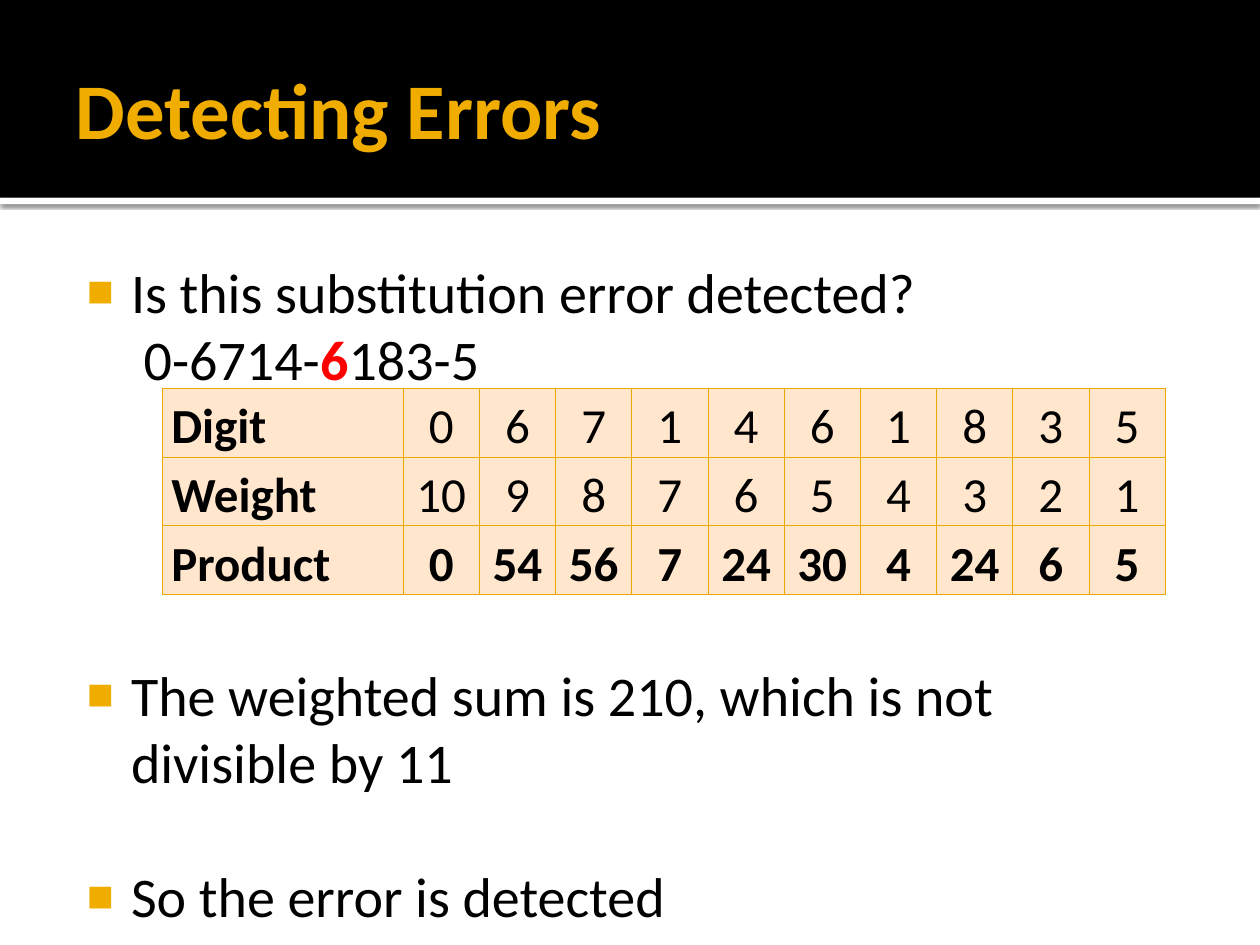
"""Build the slide on detecting a substitution error with a weighted sum."""
from lxml import etree
from pptx import Presentation
from pptx import util as u
from pptx.dml import color
from pptx.enum import shapes, text
from pptx.oxml import ns

FONT, GOLD, BLACK, RED = "Calibri", "F0AD00", "000000", "FF0000"
CELL, BORDER = "FFE6CC", "EBA900"
LINE = 38.4


def rgb(value):
    return color.RGBColor.from_string(value)


def add_xml(parent, tag, **attrs):
    return etree.SubElement(parent, ns.qn(tag), **attrs)


class Deck:
    def __init__(self, prs):
        self.s = prs.slides.add_slide(prs.slide_layouts[1])

    def style(self, r, size, bold=False, c=BLACK):
        r.font.name, r.font.size, r.font.bold = FONT, u.Pt(size), bold
        r.font.color.rgb = rgb(c)

    def frame(self, sp, box, margins):
        sp.left, sp.top, sp.width, sp.height = map(u.Inches, box)
        tf = sp.text_frame
        tf.auto_size = text.MSO_AUTO_SIZE.NONE
        tf.margin_left, tf.margin_top, tf.margin_right, tf.margin_bottom = map(u.Inches, margins)
        return tf

    def band(self, top, height, fill, shadow=False):
        sp = self.s.shapes.add_shape(shapes.MSO_SHAPE.RECTANGLE, 0, u.Inches(top),
                                     u.Inches(10), u.Inches(height))
        sp.shadow.inherit = False
        sp.fill.solid()
        sp.fill.fore_color.rgb = rgb(fill)
        sp.line.fill.background()
        if shadow:
            effects = sp._element.spPr.find(ns.qn("a:effectLst"))
            outer = add_xml(effects, "a:outerShdw", blurRad=str(u.Pt(2.5)), dist=str(u.Pt(0.8)),
                            dir="5400000", algn="tl", rotWithShape="0")
            add_xml(add_xml(outer, "a:srgbClr", val=BLACK), "a:alpha", val="60000")
        self.s.shapes._spTree.insert(2, sp._element)

    def title(self, words):
        tf = self.frame(self.s.shapes.title, (0.5, 0.17, 9, 1.37), (0.1, 0.05, 0.05, 0.05))
        tf.vertical_anchor = text.MSO_ANCHOR.MIDDLE
        tf.text = words
        p = tf.paragraphs[0]
        p.alignment = text.PP_ALIGN.LEFT
        self.style(p.runs[0], 45, True, GOLD)

    def bullets(self, items):
        tf = self.frame(self.s.placeholders[1], (0.5, 1.94, 9, 5.06), (0.06, 0.1, 0.1, 0.05))
        tf.text = "\n".join(words for words, _ in items)
        for p, (_, gap) in zip(tf.paragraphs, items):
            p.line_spacing, p.space_before = u.Pt(LINE), u.Pt(gap * LINE)
            pPr = p._p.get_or_add_pPr()
            pPr.set("marL", str(u.Inches(0.48)))
            pPr.set("indent", str(u.Inches(-0.35)))
            add_xml(add_xml(pPr, "a:buClr"), "a:srgbClr", val=GOLD)
            add_xml(pPr, "a:buSzPct", val="80000")
            add_xml(pPr, "a:buChar", char="■")
            for r in p.runs:
                self.style(r, 32)
        return tf

    def cell(self, cell, words, bold, centred):
        cell.fill.solid()
        cell.fill.fore_color.rgb = rgb(CELL)
        cell.margin_left = cell.margin_right = u.Inches(0.07)
        cell.margin_top = cell.margin_bottom = 0
        cell.text_frame.text = words
        p = cell.text_frame.paragraphs[0]
        p.line_spacing = 1.15
        p.alignment = text.PP_ALIGN.CENTER if centred else text.PP_ALIGN.LEFT
        self.style(p.runs[0], 28, bold)
        tcPr = cell._tc.get_or_add_tcPr()
        for i, side in enumerate(("a:lnL", "a:lnR", "a:lnT", "a:lnB")):
            ln = etree.Element(ns.qn(side), w=str(u.Pt(0.5)))
            add_xml(add_xml(ln, "a:solidFill"), "a:srgbClr", val=BORDER)
            tcPr.insert(i, ln)

    def table(self, rows):
        n = len(rows[0])
        table = self.s.shapes.add_table(len(rows), n, u.Inches(1.29), u.Inches(3.08),
                                        u.Inches(7.96), u.Inches(1.61)).table
        first = 1.91
        for j, col in enumerate(table.columns):
            col.width = u.Inches((7.96 - first) / (n - 1) if j else first)
        for i, row in enumerate(rows):
            for j, value in enumerate(row):
                self.cell(table.cell(i, j), str(value), j == 0 or i == len(rows) - 1, j > 0)


def main():
    prs = Presentation()
    prs.slide_width, prs.slide_height = u.Inches(10), u.Inches(7.5)
    deck = Deck(prs)
    deck.band(0, 1.57, BLACK)
    deck.band(1.57, 0.05, "FFFFFF", shadow=True)
    deck.title("Detecting Errors")
    tf = deck.bullets([("Is this substitution error detected?\v 0-6714-", 0),
                       ("The weighted sum is 210, which is not divisible by 11", 4),
                       ("So the error is detected", 1)])
    for words, bold, c in (("6", True, RED), ("183-5", False, BLACK)):
        r = tf.paragraphs[0].add_run()
        r.text = words
        deck.style(r, 32, bold, c)
    digits = [0, 6, 7, 1, 4, 6, 1, 8, 3, 5]
    weights = list(range(10, 0, -1))
    products = [d * w for d, w in zip(digits, weights)]
    deck.table([["Digit", *digits], ["Weight", *weights], ["Product", *products]])
    prs.save("out.pptx")


if __name__ == "__main__":
    main()
